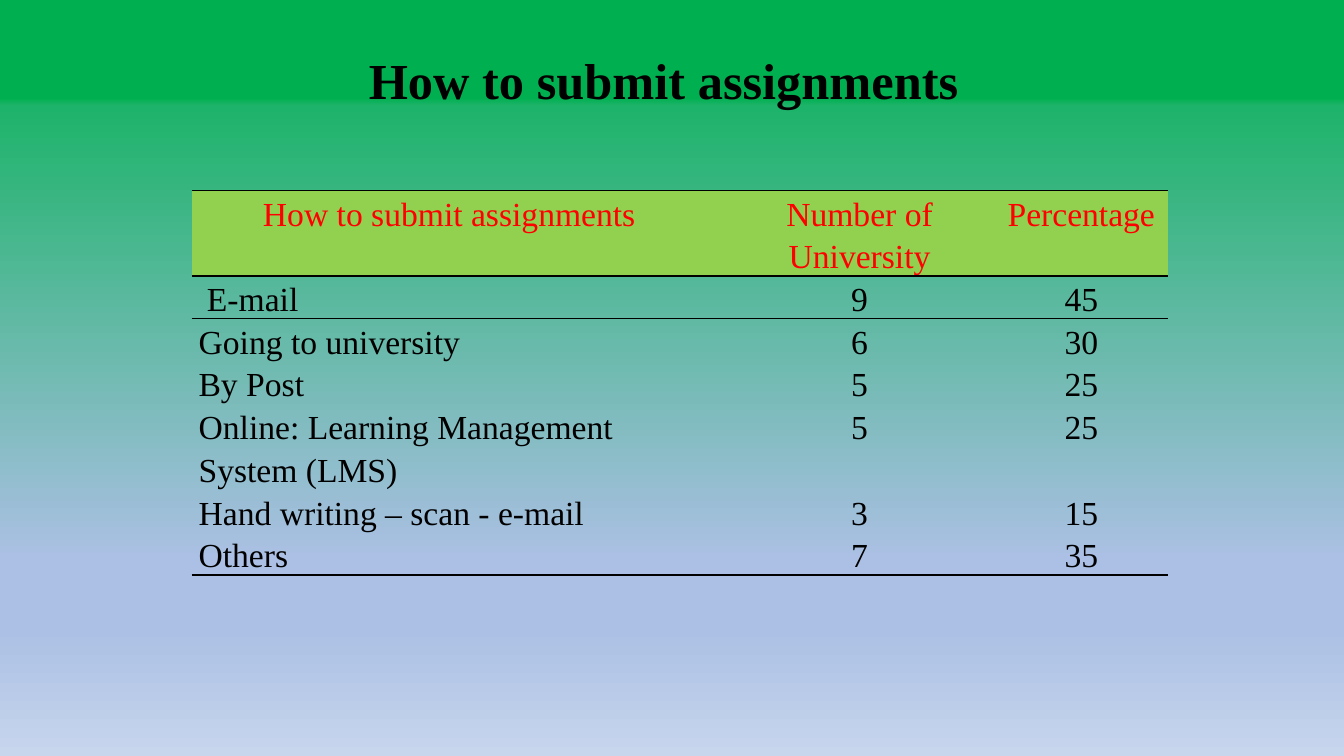
import pptx
import pptx.util
import pptx.dml.color
import pptx.enum.text
import pptx.oxml
import pptx.oxml.ns

Inches, Pt = pptx.util.Inches, pptx.util.Pt
RGB = pptx.dml.color.RGBColor.from_string
ALIGN = pptx.enum.text.PP_ALIGN
ANCHOR = pptx.enum.text.MSO_ANCHOR
qn, nsdecls = pptx.oxml.ns.qn, pptx.oxml.ns.nsdecls

# Content
TITLE = "How to submit assignments"
HEAD = ("How to submit assignments", "Number of University", "Percentage")
ROWS = [
    (" E-mail", 9, 45),
    ("Going to university", 6, 30),
    ("By Post", 5, 25),
    ("Online: Learning Management System (LMS)", 5, 25),
    ("Hand writing – scan - e-mail", 3, 15),
    ("Others", 7, 35),
]
WIDTHS = (5.28, 2.69, 1.71)
LINES = (2, 1, 1, 1, 2, 1, 1)  # text lines in each row
PITCH = 0.42

THEME = {
    "font": "Times New Roman", "title": 36, "body": 24,
    "ink": "000000", "head": "FF0000", "band": "92D050",
    "sky": [(13, "00B050"), (14, "1EB36A"), (74, "ABC0E4"),
            (83, "ABC0E4"), (100, "C7D5ED")],
    "plain": "{2D5ABB26-0587-4C30-8999-92F81FD0307C}",
}


def style(para, size, color, bold=False):
    for run in para.runs:
        font = run.font
        font.name, font.size, font.bold = THEME["font"], Pt(size), bold
        font.color.rgb = RGB(color)


def rule(cell, sides):
    """Draw cell borders; sides maps T or B to points, in that order."""
    props = cell._tc.get_or_add_tcPr()
    for i, (side, pts) in enumerate(sides.items()):
        props.insert(i, pptx.oxml.parse_xml(
            f'<a:ln{side} {nsdecls("a")} w="{Pt(pts)}"><a:solidFill>'
            f'<a:srgbClr val="{THEME["ink"]}"/></a:solidFill></a:ln{side}>'))


def paint(slide):
    fill = slide.background.fill
    fill.gradient()
    fill.gradient_angle = 270
    stops = slide._element.find(".//" + qn("a:gsLst"))
    for stop in list(stops):
        stops.remove(stop)
    for pos, color in THEME["sky"]:
        stops.append(pptx.oxml.parse_xml(
            f'<a:gs {nsdecls("a")} pos="{pos * 1000}">'
            f'<a:srgbClr val="{color}"/></a:gs>'))


def add_grid(slide):
    data = [HEAD] + ROWS
    last = len(data) - 1
    frame = slide.shapes.add_table(
        len(data), len(HEAD), Inches(1.9), Inches(1.89),
        Inches(sum(WIDTHS)), Inches(PITCH * sum(LINES)))
    table = frame.table
    table.horz_banding = False
    frame._element.find(".//" + qn("a:tableStyleId")).text = THEME["plain"]
    for col, width in zip(table.columns, WIDTHS):
        col.width = Inches(width)
    # Borders by row: around the header and under the last row
    edges = {0: {"T": 1, "B": 1}, 1: {"T": 1}, last: {"B": 1.5}}
    for r, row in enumerate(data):
        table.rows[r].height = Inches(PITCH * LINES[r])
        for c, text in enumerate(row):
            cell = table.cell(r, c)
            label = r > 0 and c == 0
            cell.margin_left = cell.margin_right = Inches(0.07)
            cell.margin_top = cell.margin_bottom = 0
            cell.vertical_anchor = ANCHOR.MIDDLE if label else ANCHOR.TOP
            cell.text_frame.text = str(text)
            para = cell.text_frame.paragraphs[0]
            para.alignment = ALIGN.LEFT if label else ALIGN.CENTER
            para.line_spacing, para.space_after = 1.15, Pt(10)
            style(para, THEME["body"], THEME["ink" if r else "head"])
            if r:
                cell.fill.background()
            else:
                cell.fill.solid()
                cell.fill.fore_color.rgb = RGB(THEME["band"])
            rule(cell, edges.get(r, {}))
    # First heading sits slightly left of centre
    table.cell(0, 0).margin_right = Inches(0.24)


def add_title(slide):
    box = slide.shapes.add_textbox(
        Inches(3.56), Inches(0.43), Inches(6.36), Inches(0.71))
    frame = box.text_frame
    frame.word_wrap = True
    frame.vertical_anchor = ANCHOR.MIDDLE
    frame.text = TITLE
    para = frame.paragraphs[0]
    para.alignment = ALIGN.JUSTIFY
    style(para, THEME["title"], THEME["ink"], bold=True)


def main():
    deck = pptx.Presentation()
    deck.slide_width, deck.slide_height = Inches(13.33), Inches(7.5)
    slide = deck.slides.add_slide(deck.slide_layouts[6])
    paint(slide)
    add_grid(slide)
    add_title(slide)
    deck.save("out.pptx")


if __name__ == "__main__":
    main()
